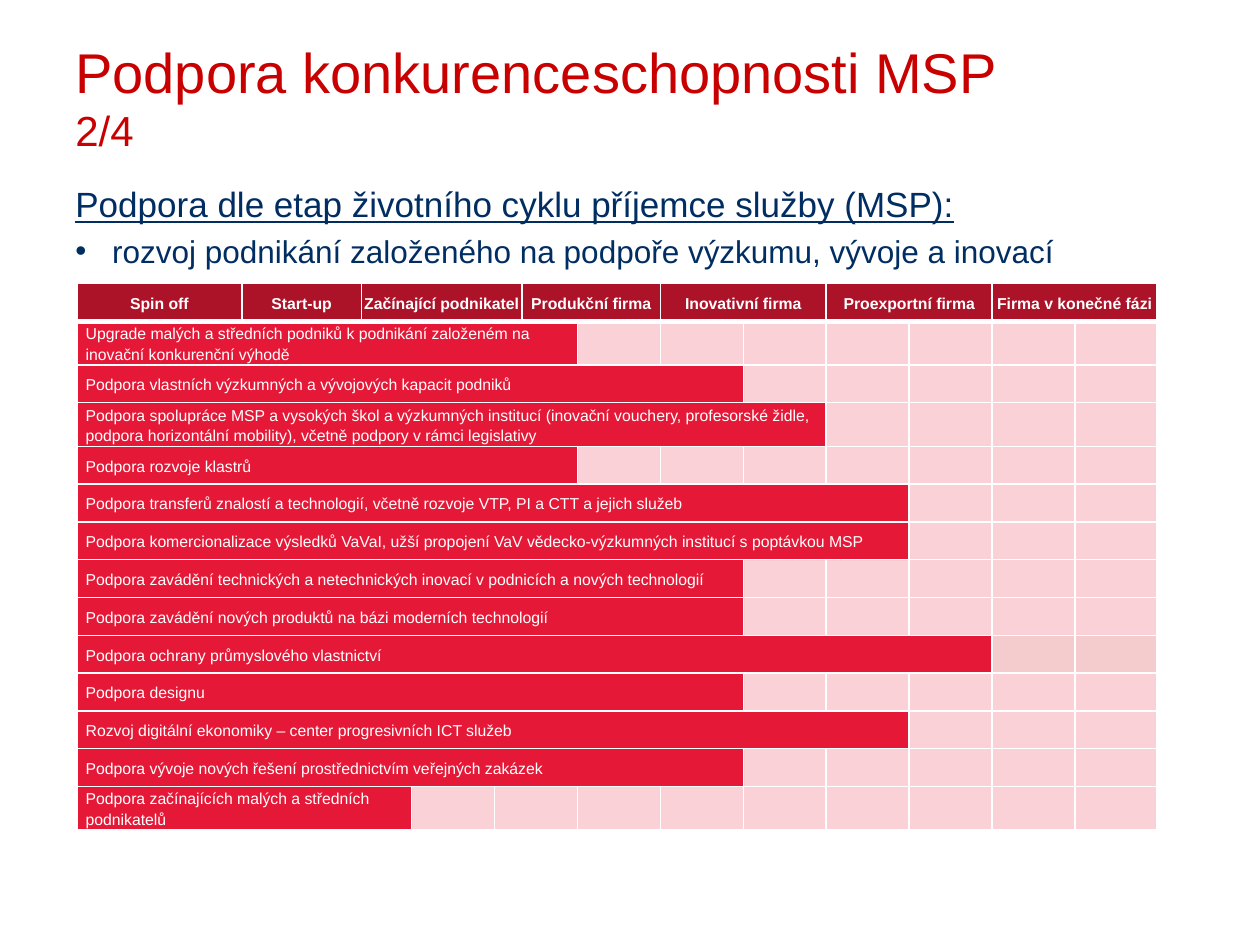
import pptx
import pptx.util
import pptx.dml.color
import pptx.enum.text
import lxml.etree

Pt = pptx.util.Pt
ALIGN = pptx.enum.text.PP_ALIGN
ANCHOR = pptx.enum.text.MSO_ANCHOR
NS = "http://schemas.openxmlformats.org/drawingml/2006/main"

RED, NAVY, WHITE = "C90000", "002D62", "FFFFFF"
HEAD, BAR, PALE, DIM = "AC1329", "E51937", "FAD1D7", "F5CCCE"

COLS = [94.2, 68.3, 28.8, 47.4, 15.6, 31.7] + [47.4] * 6 + [46.8]
LOW, TALL = 21.6, 24.5

# Life-cycle stages: label, columns spanned
STAGES = [
    ("Spin off", 1), ("Start-up", 1), ("Začínající podnikatel", 3),
    ("Produkční firma", 2), ("Inovativní firma", 2),
    ("Proexportní firma", 2), ("Firma v konečné fázi", 2),
]

# Support measures: label, columns spanned, row height, colour of the rest
BARS = [
    ("Upgrade malých a středních podniků k podnikání založeném na "
     "inovační konkurenční výhodě", 6, TALL, PALE),
    ("Podpora vlastních výzkumných a vývojových kapacit podniků", 8, LOW, PALE),
    ("Podpora spolupráce MSP a vysokých škol a výzkumných institucí "
     "(inovační vouchery, profesorské židle, podpora horizontální mobility), "
     "včetně podpory v rámci legislativy", 9, TALL, PALE),
    ("Podpora rozvoje klastrů", 6, LOW, PALE),
    ("Podpora transferů znalostí a technologií, včetně rozvoje VTP, "
     "PI a CTT a jejich služeb", 10, LOW, PALE),
    ("Podpora komercionalizace výsledků VaVaI, užší propojení VaV "
     "vědecko-výzkumných institucí s poptávkou MSP", 10, LOW, PALE),
    ("Podpora zavádění technických a netechnických inovací v podnicích "
     "a nových technologií", 8, LOW, PALE),
    ("Podpora zavádění nových produktů na bázi moderních technologií",
     8, LOW, PALE),
    ("Podpora ochrany průmyslového vlastnictví", 11, LOW, DIM),
    ("Podpora designu", 8, LOW, PALE),
    ("Rozvoj digitální ekonomiky – center progresivních ICT služeb",
     10, LOW, PALE),
    ("Podpora vývoje nových řešení prostřednictvím veřejných zakázek",
     8, LOW, PALE),
    ("Podpora začínajících malých a středních podnikatelů", 3, TALL, PALE),
]


def color(code):
    return pptx.dml.color.RGBColor.from_string(code)


def write(par, text, size, ink, bold=False, line=False, align=None,
          lead=None, before=None):
    """Add a formatted run to a paragraph."""
    if align is not None:
        par.alignment = align
    if lead:
        par.line_spacing = lead
    if before:
        par.space_before = Pt(before)
    run = par.add_run()
    run.text = text
    font = run.font
    font.name, font.size = "Arial", Pt(size)
    font.bold, font.underline = bold, line
    font.color.rgb = color(ink)


def bind(text):
    """Keep one-letter words on the line of the next word."""
    for word in "akvs":
        text = text.replace(f" {word} ", f" {word}{chr(160)}")
    return text


def add_box(slide, left, top, width, height, anchor):
    box = slide.shapes.add_textbox(Pt(left), Pt(top), Pt(width), Pt(height))
    frame = box.text_frame
    frame.word_wrap = True
    frame.vertical_anchor = anchor
    return frame


def bullet(par, indent):
    props = par._p.get_or_add_pPr()
    props.set("marL", str(Pt(indent)))
    props.set("indent", str(-Pt(indent)))
    lxml.etree.SubElement(props, f"{{{NS}}}buFont", typeface="Arial")
    lxml.etree.SubElement(props, f"{{{NS}}}buChar", char="•")


def style(cell, fill, base=1, left=0):
    """Set borders, fill, margins and anchor of a cell."""
    props = cell._tc.get_or_add_tcPr()
    for side, width in (("L", 1), ("R", 1), ("T", 1), ("B", base)):
        edge = lxml.etree.SubElement(props, f"{{{NS}}}ln{side}",
                                     w=str(Pt(width)))
        solid = lxml.etree.SubElement(edge, f"{{{NS}}}solidFill")
        lxml.etree.SubElement(solid, f"{{{NS}}}srgbClr", val=WHITE)
    cell.fill.solid()
    cell.fill.fore_color.rgb = color(fill)
    cell.margin_left = Pt(left)
    cell.margin_right = cell.margin_top = cell.margin_bottom = 0
    cell.vertical_anchor = ANCHOR.MIDDLE


def merge(table, row, col, span):
    if span > 1:
        table.cell(row, col).merge(table.cell(row, col + span - 1))


def add_head(table):
    col = 0
    for label, span in STAGES:
        for pos in range(col, col + span):
            style(table.cell(0, pos), HEAD, base=3)
        merge(table, 0, col, span)
        write(table.cell(0, col).text_frame.paragraphs[0], label, 9, WHITE,
              bold=True, align=ALIGN.CENTER, lead=1.15)
        col += span


def add_bar(table, row, label, span, rest):
    for col in range(len(COLS)):
        cell = table.cell(row, col)
        style(cell, BAR if col < span else rest, left=5)
        cell.text_frame.paragraphs[0].font.size = Pt(9)
    merge(table, row, 0, span)
    if span <= 4:  # the narrow columns 4 and 5 form one step
        merge(table, row, 4, 2)
    write(table.cell(row, 0).text_frame.paragraphs[0], bind(label), 9, WHITE,
          lead=1.15)


def add_grid(slide, left, top):
    rows = [LOW] + [bar[2] for bar in BARS]
    table = slide.shapes.add_table(
        len(rows), len(COLS), Pt(left), Pt(top),
        Pt(sum(COLS)), Pt(sum(rows))).table
    table.first_row = table.horz_banding = False
    for col, width in zip(table.columns, COLS):
        col.width = Pt(width)
    for row, height in zip(table.rows, rows):
        row.height = Pt(height)
    add_head(table)
    for row, (label, span, _, rest) in enumerate(BARS, 1):
        add_bar(table, row, label, span, rest)


def main():
    deck = pptx.Presentation()
    deck.slide_width, deck.slide_height = Pt(720), Pt(540)
    slide = deck.slides.add_slide(deck.slide_layouts[6])

    # Title
    par = add_box(slide, 36, 21.6, 647.3, 67, ANCHOR.MIDDLE).paragraphs[0]
    write(par, "Podpora konkurenceschopnosti MSP", 32, RED)
    par.add_line_break()
    write(par, "2/4", 24, RED)

    # Lead text
    body = add_box(slide, 36, 101, 648, 345.6, ANCHOR.TOP)
    write(body.paragraphs[0],
          "Podpora dle etap životního cyklu příjemce služby (MSP):",
          20, NAVY, line=True)
    par = body.add_paragraph()
    par.space_before = Pt(4)
    bullet(par, 21)
    write(par, "rozvoj podnikání založeného na podpoře výzkumu, "
          "vývoje a inovací", 18, NAVY)

    # Stages and measures
    add_grid(slide, 44, 162)

    deck.save("out.pptx")


if __name__ == "__main__":
    main()
